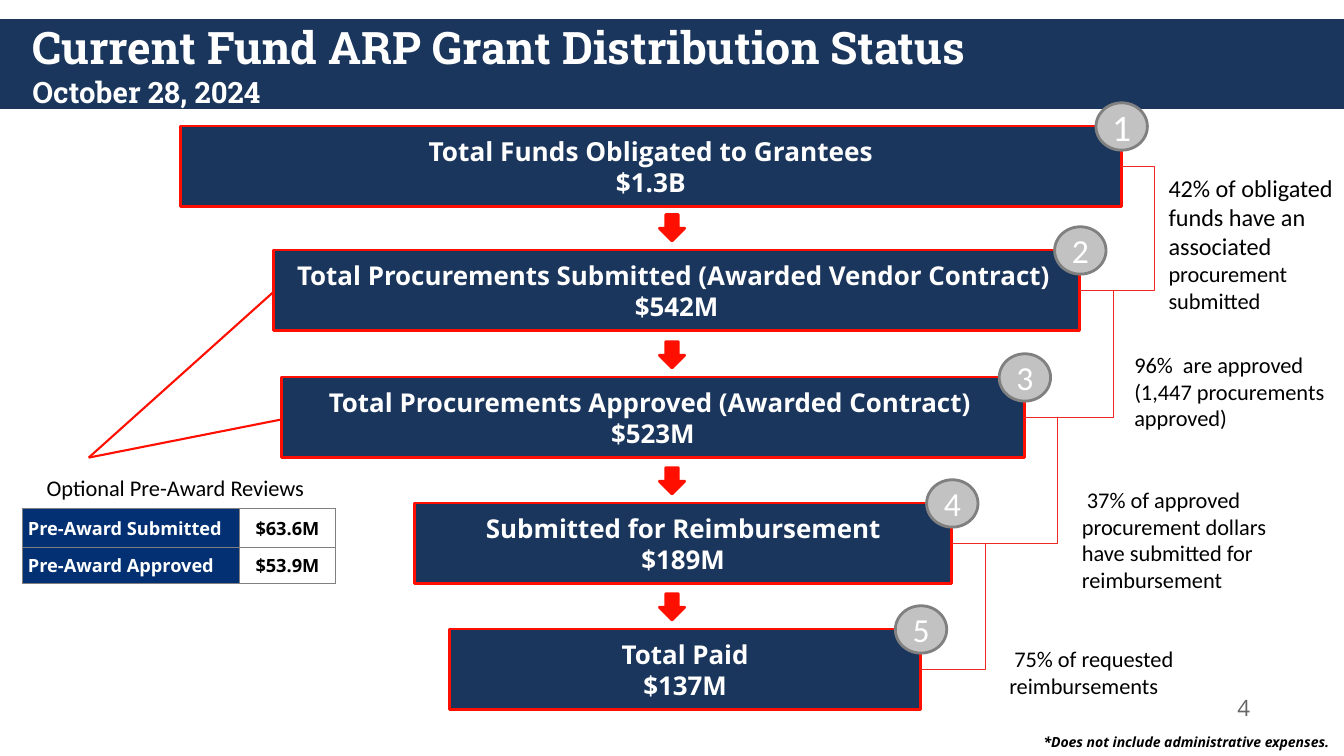
from dataclasses import dataclass

from lxml.etree import SubElement
from pptx import Presentation
from pptx.dml.color import RGBColor
from pptx.enum.shapes import MSO_CONNECTOR, MSO_SHAPE
from pptx.enum.text import MSO_ANCHOR, MSO_AUTO_SIZE, PP_ALIGN
from pptx.oxml.ns import qn
from pptx.util import Inches, Pt


@dataclass(frozen=True)
class Theme:
    navy: str = "1B365D"
    blue: str = "023072"
    red: str = "FF0F00"
    link: str = "ED2922"
    dot: str = "C2C2C2"
    edge: str = "808080"
    grey: str = "666666"
    white: str = "FFFFFF"
    black: str = "000000"
    head: str = "Roboto Slab"
    sans: str = "Open Sans"
    body: str = "Calibri"
    title: float = 32
    date: float = 21
    step: float = 18.5
    mark: float = 24
    lead: float = 17.3
    note: float = 16
    cell: float = 13
    foot: float = 10


class Deck:
    def __init__(self, theme):
        self.theme = theme
        self.file = Presentation()
        self.file.slide_width = Inches(13.33)
        self.file.slide_height = Inches(7.5)
        self.slide = self.file.slides.add_slide(self.file.slide_layouts[5])
        self.shapes = self.slide.shapes

    def apply(self, item, **form):
        for name, value in form.items():
            setattr(item, name, value)

    def style(self, run, size, font, color, **form):
        self.apply(run.font, size=Pt(size), name=font, **form)
        run.font.color.rgb = RGBColor.from_string(color)

    def put(self, frame, lines, font, color, align=PP_ALIGN.LEFT, **form):
        """Each line is a pair of text and size."""
        for i, (text, size) in enumerate(lines):
            para = frame.add_paragraph() if i else frame.paragraphs[0]
            para.alignment = align
            run = para.add_run()
            run.text = text
            self.style(run, size, font, color, **form)

    def frame(self, frame, side, top, anchor=MSO_ANCHOR.TOP):
        self.apply(frame, word_wrap=True, vertical_anchor=anchor,
                   margin_left=Inches(side), margin_right=Inches(side),
                   margin_top=Inches(top), margin_bottom=Inches(top))
        return frame

    def stroke(self, line, color, width):
        line.color.rgb = RGBColor.from_string(color)
        line.width = Pt(width)

    def title(self, box, text, date):
        t, item = self.theme, self.shapes.title
        for name, value in zip(("left", "top", "width", "height"), box):
            setattr(item, name, Inches(value))
        frame = self.frame(item.text_frame, 0.1, 0.05, MSO_ANCHOR.MIDDLE)
        frame.auto_size = MSO_AUTO_SIZE.NONE
        self.put(frame, [(text, t.title)], t.head, t.white, bold=True)
        para = frame.paragraphs[0]
        para.add_line_break()
        run = para.add_run()
        run.text = date
        self.style(run, t.date, t.head, t.white, bold=True)

    def shape(self, kind, box, fill, line=None):
        item = self.shapes.add_shape(kind, *map(Inches, box))
        item.shadow.inherit = False
        item.fill.solid()
        item.fill.fore_color.rgb = RGBColor.from_string(fill)
        if line:
            self.stroke(item.line, line, 2)
        else:
            item.line.fill.background()
        return item

    def band(self, box):
        item = self.shape(MSO_SHAPE.RECTANGLE, box, self.theme.navy)
        self.shapes._spTree.insert(2, item._element)  # behind the title

    def step(self, box, lines):
        t = self.theme
        item = self.shape(MSO_SHAPE.RECTANGLE, box, t.navy, t.red)
        frame = self.frame(item.text_frame, 0.13, 0.07, MSO_ANCHOR.MIDDLE)
        self.put(frame, lines, t.sans, t.white, PP_ALIGN.CENTER, bold=True)

    def dot(self, left, top, text, size):
        t = self.theme
        item = self.shape(MSO_SHAPE.OVAL, (left, top, 0.51, 0.47), t.dot, t.edge)
        frame = self.frame(item.text_frame, 0, 0, MSO_ANCHOR.MIDDLE)
        self.put(frame, [(text, size)], t.body, t.white, PP_ALIGN.CENTER)

    def arrow(self, top):
        red = self.theme.red
        self.shape(MSO_SHAPE.DOWN_ARROW, (6.54, top, 0.25, 0.26), red, red)

    def line(self, start, end, color, width, bend=None):
        kind = MSO_CONNECTOR.ELBOW if bend else MSO_CONNECTOR.STRAIGHT
        item = self.shapes.add_connector(kind, *map(Inches, start + end))
        self.stroke(item.line, color, width)
        props = item._element.spPr
        SubElement(props, qn("a:effectLst"))
        if bend:
            form = props.find(qn("a:prstGeom"))
            guides = form.find(qn("a:avLst"))
            if guides is None:
                guides = SubElement(form, qn("a:avLst"))
            ratio = round(bend * 100000)
            SubElement(guides, qn("a:gd"), name="adj1", fmla=f"val {ratio}")

    def note(self, box, lines, font, color, side=0.13, top=0.07, **form):
        item = self.shapes.add_textbox(*map(Inches, box))
        self.put(self.frame(item.text_frame, side, top), lines, font, color, **form)

    def table(self, box, wides, highs, rows):
        t = self.theme
        grid = self.shapes.add_table(len(rows), len(wides), *map(Inches, box)).table
        self.apply(grid, first_row=False, horz_banding=False)
        for col, wide in zip(grid.columns, wides):
            col.width = Inches(wide)
        for row, high in zip(grid.rows, highs):
            row.height = Inches(high)
        looks = ((t.blue, t.white, PP_ALIGN.LEFT), (t.white, t.black, PP_ALIGN.CENTER))
        for r, row in enumerate(rows):
            for c, (text, (fill, color, align)) in enumerate(zip(row, looks)):
                cell = grid.cell(r, c)
                self.apply(cell, vertical_anchor=MSO_ANCHOR.MIDDLE,
                           margin_left=Inches(0.01), margin_right=Inches(0.01),
                           margin_top=Inches(0.01), margin_bottom=0)
                self.put(cell.text_frame, [(text, t.cell)], t.sans, color, align, bold=True)
                props = cell._tc.get_or_add_tcPr()
                for side in ("lnL", "lnR", "lnT", "lnB"):
                    edge = SubElement(props, qn(f"a:{side}"), w=str(Pt(0.5)))
                    paint = SubElement(edge, qn("a:solidFill"))
                    SubElement(paint, qn("a:srgbClr"), val=t.edge)
                cell.fill.solid()
                cell.fill.fore_color.rgb = RGBColor.from_string(fill)


def main():
    t = Theme()
    deck = Deck(t)

    # Title band
    deck.band((0, 0.19, 13.33, 0.89))
    deck.title((0.22, 0.19, 12.89, 0.9), "Current Fund ARP Grant Distribution Status",
               "October 28, 2024")

    # Lines to the reviews
    for end in ((3.96, 3.93), (2.82, 2.8)):
        deck.line((0.88, 4.54), end, t.red, 1.5)

    # Steps: left, top, width, label, amount, label size, mark size
    steps = [
        (1.79, 1.25, 9.33, "Total Funds Obligated to Grantees", "$1.3B", 18.7, 26.7),
        (2.71, 2.48, 8, "Total Procurements Submitted (Awarded Vendor Contract) ", "$542M",
         t.step, t.mark),
        (2.79, 3.74, 7.37, "Total Procurements Approved (Awarded Contract) ", "$523M",
         t.step, t.mark),
        (4.11, 4.99, 5.33, "Submitted for Reimbursement", "$189M", t.step, t.mark),
        (4.46, 6.24, 4.67, "Total Paid", "$137M", t.step, t.mark),
    ]
    last = None
    for num, (left, top, width, label, total, size, mark) in enumerate(steps, 1):
        here = (left + width, top + 0.4)
        deck.step((left, top, width, 0.8), [(label, size), (total, size)])
        if last:
            deck.arrow(top - 0.35)
            run = last[0] - here[0]
            deck.line(here, last, t.link, 0.75, (run + 0.33) / run)
        deck.dot(here[0] - 0.25, top - 0.23, str(num), mark)
        last = here

    # Notes on the right
    notes = [
        ((11.46, 1.65, 1.96, 1.55), [("42% of obligated funds have an associated", t.lead),
                                     ("procurement submitted", t.note)]),
        ((11.12, 3.41, 2.24, 0.94), [("96%  are approved", t.note),
                                     ("(1,447 procurements approved)", t.note)]),
        ((10.6, 4.75, 2.52, 1.21),
         [(" 37% of approved procurement dollars have submitted for reimbursement", t.note)]),
        ((9.88, 6.33, 1.98, 0.67), [(" 75% of requested reimbursements", t.note)]),
    ]
    for box, lines in notes:
        deck.note(box, lines, t.body, t.black)

    # Reviews table
    deck.note((-0.13, 4.65, 3.74, 0.37), [("Optional Pre-Award Reviews", t.note)],
              t.body, t.black, 0.1, 0.05, align=PP_ALIGN.CENTER)
    deck.table((0.22, 5.04, 3.11, 0.75), (2.15, 0.96), (0.39, 0.36),
               ((" Pre-Award Submitted", "$63.6M"), (" Pre-Award Approved", "$53.9M")))

    # Footer
    deck.note((12, 6.84, 0.67, 0.42), [("4", t.note)], t.sans, t.grey, 0.1, 0.05,
              align=PP_ALIGN.CENTER)
    deck.note((10.22, 7.21, 3.27, 0.3), [("*Does not include administrative expenses.", t.foot)],
              t.sans, t.black, bold=True, italic=True)
    deck.file.save("out.pptx")


if __name__ == "__main__":
    main()
